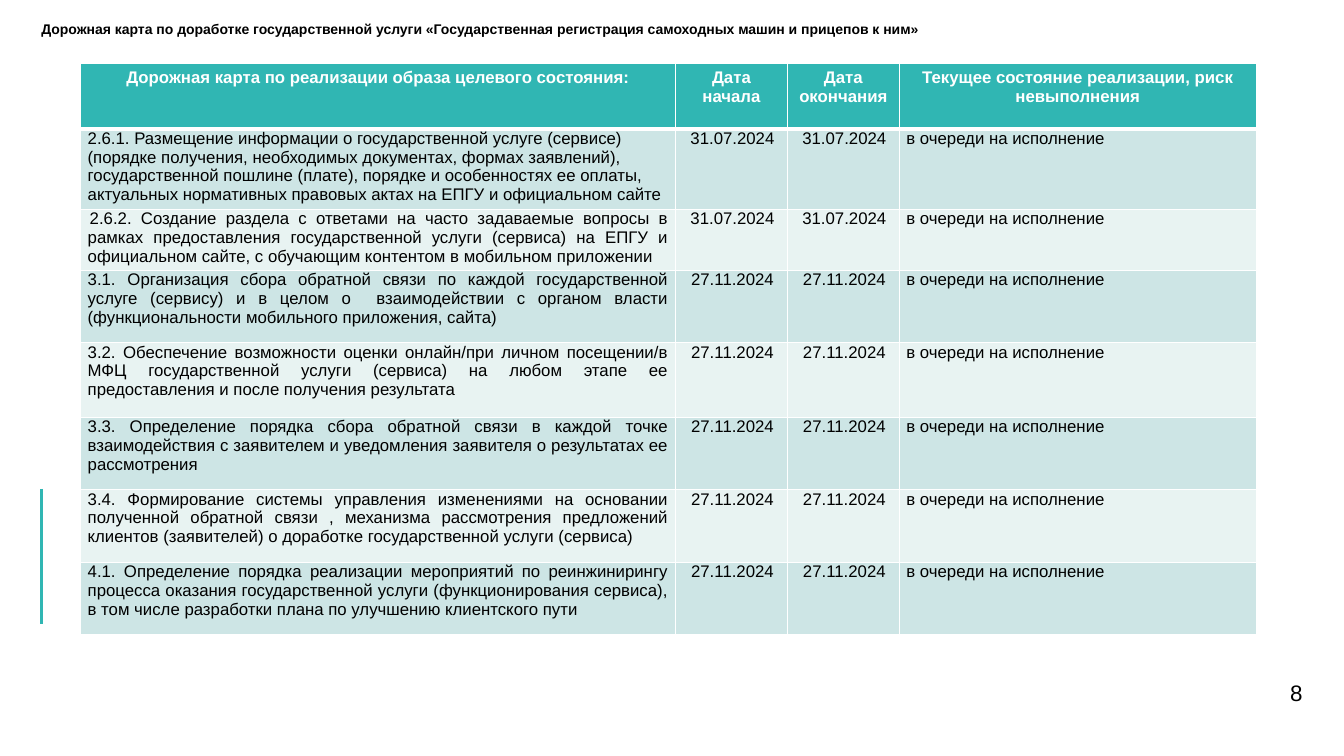
"""Build the roadmap slide for the vehicle registration service."""
import pptx
import pptx.dml.color
import pptx.enum.shapes
import pptx.enum.text
import pptx.oxml
import pptx.oxml.ns
import pptx.util

PX = 9144
TEAL = pptx.dml.color.RGBColor(0x30, 0xB6, 0xB3)
BAND_DARK = pptx.dml.color.RGBColor(0xCD, 0xE5, 0xE5)
BAND_LIGHT = pptx.dml.color.RGBColor(0xE8, 0xF3, 0xF2)
WHITE = pptx.dml.color.RGBColor(0xFF, 0xFF, 0xFF)
BLACK = pptx.dml.color.RGBColor(0, 0, 0)

ALIGN = pptx.enum.text.PP_ALIGN
ANCHOR = pptx.enum.text.MSO_ANCHOR
HEADER_MARGINS = {"margin_left": 10, "margin_right": 10, "margin_top": 5, "margin_bottom": 5}
BODY_MARGINS = {"margin_left": 7, "margin_right": 7, "margin_top": 0, "margin_bottom": 0}
NO_MARGINS = dict.fromkeys(BODY_MARGINS, 0)

COLUMN_WIDTHS = [590, 111, 111, 354]
ROW_HEIGHTS = [65, 55, 47, 72, 74, 72, 72, 72]
HEADINGS = [
    "Дорожная карта по реализации образа целевого состояния:",
    "Дата\nначала",
    "Дата окончания",
    "Текущее состояние реализации, риск невыполнения",
]
STATUS = "в очереди на исполнение"
SUMMER, AUTUMN = "31.07.2024", "27.11.2024"
STEPS = [
    ("2.6.1. Размещение информации о государственной услуге (сервисе) (порядке получения, "
     "необходимых документах, формах заявлений), государственной пошлине (плате), порядке и "
     "особенностях ее оплаты, актуальных нормативных правовых актах на ЕПГУ и официальном сайте",
     SUMMER, ALIGN.LEFT, 0),
    ("2.6.2. Создание раздела с ответами на часто задаваемые вопросы в рамках предоставления "
     "государственной услуги (сервиса) на ЕПГУ и официальном сайте, с обучающим контентом "
     "в мобильном приложении", SUMMER, ALIGN.JUSTIFY, 2),
    ("3.1. Организация сбора обратной связи по каждой государственной услуге (сервису) и в целом "
     "о  взаимодействии с органом власти (функциональности мобильного приложения, сайта)",
     AUTUMN, ALIGN.JUSTIFY, 0),
    ("3.2. Обеспечение возможности оценки онлайн/при личном посещении/в МФЦ государственной "
     "услуги (сервиса) на любом этапе ее предоставления и после получения результата",
     AUTUMN, ALIGN.JUSTIFY, 0),
    ("3.3. Определение порядка сбора обратной связи в каждой точке взаимодействия с заявителем "
     "и уведомления заявителя о результатах ее рассмотрения", AUTUMN, ALIGN.JUSTIFY, 0),
    ("3.4. Формирование системы управления изменениями на основании полученной обратной связи , "
     "механизма рассмотрения предложений клиентов (заявителей) о доработке государственной "
     "услуги (сервиса)", AUTUMN, ALIGN.JUSTIFY, 0),
    ("4.1. Определение порядка реализации мероприятий по реинжинирингу процесса оказания "
     "государственной услуги (функционирования сервиса), в том числе разработки плана по "
     "улучшению клиентского пути", AUTUMN, ALIGN.JUSTIFY, 0),
]


def px(length):
    """Turn pixels into EMU."""
    return pptx.util.Emu(length * PX)


def apply(target, values):
    """Set every attribute named in values on target."""
    for name, value in values.items():
        setattr(target, name, value)


def set_margins(holder, margins):
    """Set margins given in pixels."""
    apply(holder, {side: px(length) for side, length in margins.items()})


def write(frame, text, size, color, bold=False, align=ALIGN.LEFT, indent=0, spacing=None):
    """Write one formatted paragraph per line of text."""
    frame.text = text
    for paragraph in frame.paragraphs:
        if indent:
            paragraph._p.get_or_add_pPr().set("indent", str(px(indent)))
        apply(paragraph, {"alignment": align, "line_spacing": spacing})
        for run in paragraph.runs:
            apply(run.font, {"name": "Arial", "size": pptx.util.Pt(size), "bold": bold})
            run.font.color.rgb = color


def add_label(slide, box, text, size, anchor=ANCHOR.TOP, **style):
    """Add a wrapping text box without margins."""
    frame = slide.shapes.add_textbox(*map(px, box)).text_frame
    apply(frame, {"word_wrap": True, "vertical_anchor": anchor})
    set_margins(frame, NO_MARGINS)
    write(frame, text, size, BLACK, **style)


def add_accent(slide, x, top, bottom):
    """Add the vertical accent line."""
    accent = slide.shapes.add_connector(
        pptx.enum.shapes.MSO_CONNECTOR.STRAIGHT, px(x), px(top), px(x), px(bottom))
    accent.line.width = pptx.util.Pt(2.25)
    accent.line.color.rgb = TEAL
    accent._element.spPr.append(pptx.oxml.parse_xml(
        f"<a:effectLst {pptx.oxml.ns.nsdecls('a')}/>"))


def set_borders(cell, widths):
    """Draw white cell borders with widths in points by side."""
    for side, width in widths.items():
        cell._tc.get_or_add_tcPr().append(pptx.oxml.parse_xml(
            f"<a:ln{side} {pptx.oxml.ns.nsdecls('a')} w=\"{pptx.util.Pt(width)}\">"
            f"<a:solidFill><a:srgbClr val=\"{WHITE}\"/></a:solidFill></a:ln{side}>"))


def fill_cell(cell, text, fill, margins, borders, color=BLACK, **style):
    """Format one table cell and write its text."""
    set_margins(cell, margins)
    set_borders(cell, borders)
    cell.fill.solid()
    cell.fill.fore_color.rgb = fill
    write(cell.text_frame, text, 12, color, **style)


def add_roadmap(slide, left, top):
    """Add the table of roadmap steps."""
    roadmap = slide.shapes.add_table(
        len(ROW_HEIGHTS), len(COLUMN_WIDTHS), px(left), px(top),
        px(sum(COLUMN_WIDTHS)), px(sum(ROW_HEIGHTS))).table
    apply(roadmap, {"first_row": False, "horz_banding": False})
    for column, width in zip(roadmap.columns, COLUMN_WIDTHS):
        column.width = px(width)
    for row, height in zip(roadmap.rows, ROW_HEIGHTS):
        row.height = px(height)
    for column, heading in enumerate(HEADINGS):
        fill_cell(roadmap.cell(0, column), heading, TEAL, HEADER_MARGINS,
                  {"L": 1, "R": 1, "T": 1, "B": 3}, WHITE, bold=True, align=ALIGN.CENTER)
    for row, (step, date, align, indent) in enumerate(STEPS, 1):
        entries = [(step, align, indent), (date, ALIGN.CENTER, 2),
                   (date, ALIGN.CENTER, 2), (STATUS, ALIGN.JUSTIFY, 0)]
        borders = {"L": 1, "R": 1, "T": 3 if row == 1 else 1, "B": 1}
        for column, (text, alignment, shift) in enumerate(entries):
            fill_cell(roadmap.cell(row, column), text, BAND_DARK if row % 2 else BAND_LIGHT,
                      BODY_MARGINS, borders, align=alignment, indent=shift)


def main():
    """Build and save the slide."""
    deck = pptx.Presentation()
    apply(deck, {"slide_width": px(1333), "slide_height": px(750)})
    slide = deck.slides.add_slide(deck.slide_layouts[6])
    add_label(slide, (41, 22, 1105, 39),
              "Дорожная карта по доработке государственной услуги «Государственная регистрация "
              "самоходных машин и прицепов к ним»", 10, bold=True, spacing=0.9)
    add_label(slide, (1186, 666, 106, 43), "8", 16, ANCHOR.MIDDLE, align=ALIGN.RIGHT)
    add_accent(slide, 41, 485, 619)
    add_roadmap(slide, 80, 63)
    deck.save("out.pptx")


if __name__ == "__main__":
    main()
